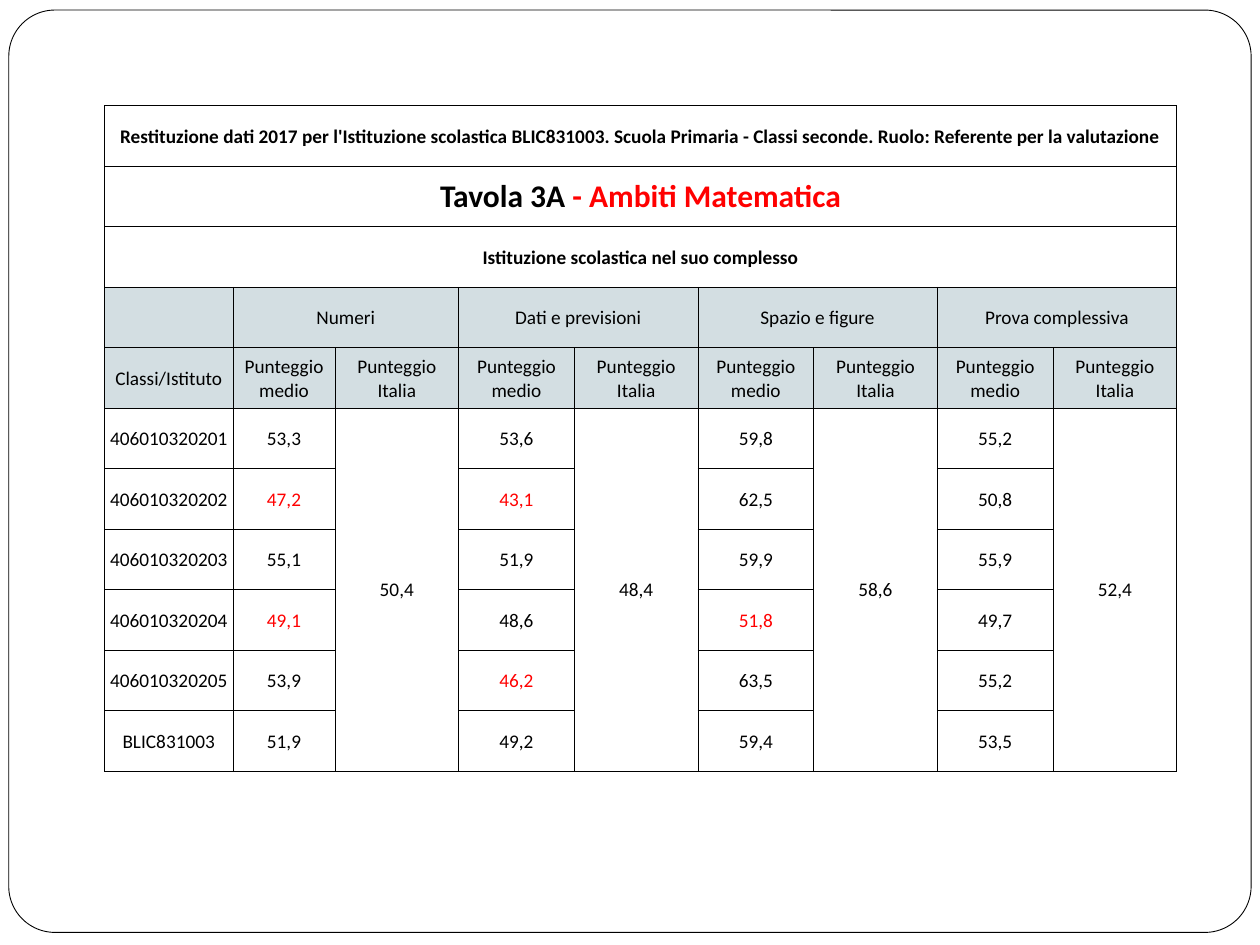
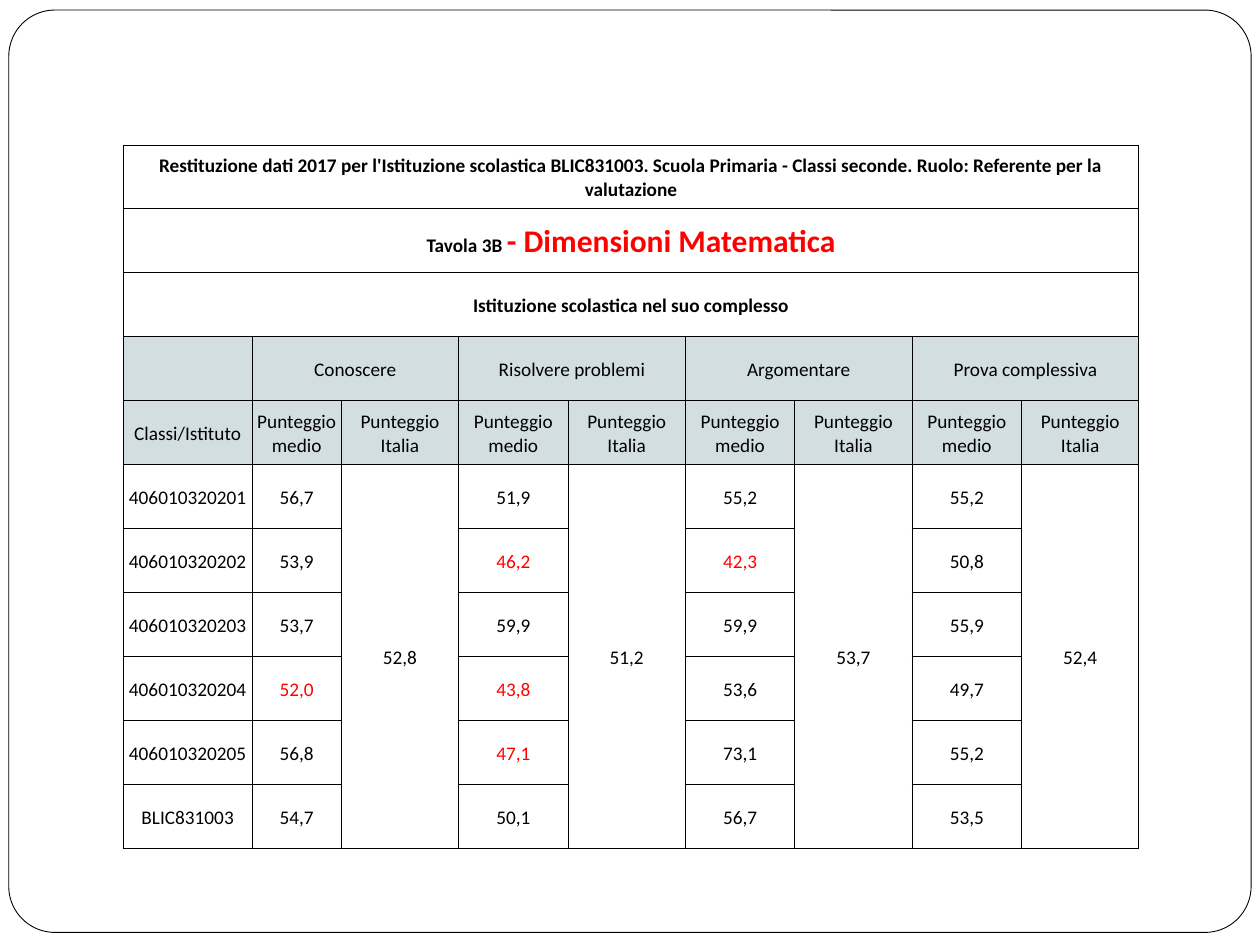
from lxml.etree import SubElement
from pptx import Presentation
from pptx.dml.color import RGBColor
from pptx.enum.shapes import MSO_SHAPE as Shape
from pptx.enum.text import MSO_ANCHOR as Anchor, PP_ALIGN as Align
from pptx.oxml.ns import qn
from pptx.util import Inches, Pt

BLACK = RGBColor(0, 0, 0)
WHITE = RGBColor(255, 255, 255)
RED = RGBColor(255, 0, 0)
HEADER_BLUE = RGBColor(0xD3, 0xDE, 0xE2)
FONT = "Calibri"
BODY_SIZE, TITLE_SIZE = 11, 18
LINE_WIDTH = Pt(0.5)

HEADING = ("Restituzione dati 2017 per l'Istituzione scolastica BLIC831003. "
           "Scuola Primaria - Classi seconde. Ruolo: Referente per la valutazione")
SCOPE = "Istituzione scolastica nel suo complesso"
CLASSES = ["406010320201", "406010320202", "406010320203",
           "406010320204", "406010320205", "BLIC831003"]
OVERALL = ("Prova complessiva", "52,4", ["55,2", "50,8", "55,9", "49,7", "55,2", "53,5"], [])

# Each group: name, Italian score, score by class, scores shown in red
TABLES = [
    {
        "title": ("Tavola 3A ", "- Ambiti Matematica"),
        "number_size": TITLE_SIZE,
        "left": 0.83, "top": 0.84, "height": 5.28,
        "columns": [1.02, 0.81, 0.98] + [0.92, 0.98] * 3,
        "groups": [
            ("Numeri", "50,4", ["53,3", "47,2", "55,1", "49,1", "53,9", "51,9"],
             ["47,2", "49,1"]),
            ("Dati e previsioni", "48,4", ["53,6", "43,1", "51,9", "48,6", "46,2", "49,2"],
             ["43,1", "46,2"]),
            ("Spazio e figure", "58,6", ["59,8", "62,5", "59,9", "51,8", "63,5", "59,4"],
             ["51,8"]),
            OVERALL,
        ],
    },
    {
        "title": ("Tavola 3B ", "- Dimensioni Matematica"),
        "number_size": BODY_SIZE,
        "left": 0.98, "top": 1.15, "height": 5.59,
        "columns": [1.02, 0.71, 0.93] + [0.87, 0.93] * 3,
        "groups": [
            ("Conoscere", "52,8", ["56,7", "53,9", "53,7", "52,0", "56,8", "54,7"],
             ["52,0"]),
            ("Risolvere problemi", "51,2", ["51,9", "46,2", "59,9", "43,8", "47,1", "50,1"],
             ["46,2", "43,8", "47,1"]),
            ("Argomentare", "53,7", ["55,2", "42,3", "59,9", "53,6", "73,1", "56,7"],
             ["42,3"]),
            OVERALL,
        ],
    },
]
GROUP_ROW, LABEL_ROW, FIRST_CLASS_ROW = 3, 4, 5
ROW_COUNT = FIRST_CLASS_ROW + len(CLASSES)


def write(cell, text, size=BODY_SIZE, color=BLACK, bold=False):
    """Append a centred run to the cell."""
    paragraph = cell.text_frame.paragraphs[0]
    paragraph.alignment = Align.CENTER
    run = paragraph.add_run()
    run.text = text
    run.font.name = FONT
    run.font.size = Pt(size)
    run.font.bold = bold
    run.font.color.rgb = color


def add_borders(cell):
    properties = cell._tc.get_or_add_tcPr()
    for position, side in enumerate(("lnL", "lnR", "lnT", "lnB")):
        line = SubElement(properties, qn(f"a:{side}"), w=str(LINE_WIDTH))
        fill = SubElement(line, qn("a:solidFill"))
        SubElement(fill, qn("a:srgbClr"), val=str(BLACK))
        properties.insert(position, line)


def format_cell(cell, is_header):
    cell.vertical_anchor = Anchor.MIDDLE
    cell.margin_left = cell.margin_right = cell.margin_top = Inches(0.01)
    cell.margin_bottom = 0
    if is_header:
        cell.fill.solid()
        cell.fill.fore_color.rgb = HEADER_BLUE
    else:
        cell.fill.background()
    add_borders(cell)


def add_frame(layout, slide):
    """Draw the rounded frame and move it to the layout that all slides share."""
    frame = slide.shapes.add_shape(Shape.ROUNDED_RECTANGLE, Inches(0.07), Inches(0.08),
                                   Inches(9.86), Inches(7.32))
    frame.adjustments[0] = 0.05
    frame.shadow.inherit = False
    frame.fill.solid()
    frame.fill.fore_color.rgb = WHITE
    frame.line.color.rgb = BLACK
    frame.line.width = LINE_WIDTH
    layout.shapes.element.insert(2, frame.element)


def add_empty_table(slide, data):
    columns = data["columns"]
    table = slide.shapes.add_table(
        ROW_COUNT, len(columns), Inches(data["left"]), Inches(data["top"]),
        Inches(sum(columns)), Inches(data["height"])).table
    table.first_row = table.horz_banding = False
    for column, width in zip(table.columns, columns):
        column.width = Inches(width)
    for row_index, row in enumerate(table.rows):
        for cell in row.cells:
            format_cell(cell, row_index in (GROUP_ROW, LABEL_ROW))
    return table


def fill_table(table, data):
    last_column = len(data["columns"]) - 1
    for row in range(GROUP_ROW):
        table.cell(row, 0).merge(table.cell(row, last_column))
    number, subject = data["title"]
    write(table.cell(0, 0), HEADING, bold=True)
    write(table.cell(1, 0), number, size=data["number_size"], bold=True)
    write(table.cell(1, 0), subject, size=TITLE_SIZE, color=RED, bold=True)
    write(table.cell(2, 0), SCOPE, bold=True)

    write(table.cell(LABEL_ROW, 0), "Classi/Istituto")
    for row, name in enumerate(CLASSES, FIRST_CLASS_ROW):
        write(table.cell(row, 0), name)

    for index, (name, italy, scores, red_scores) in enumerate(data["groups"]):
        mean_column = 1 + 2 * index
        italy_column = mean_column + 1
        table.cell(GROUP_ROW, mean_column).merge(table.cell(GROUP_ROW, italy_column))
        write(table.cell(GROUP_ROW, mean_column), name)
        write(table.cell(LABEL_ROW, mean_column), "Punteggio medio")
        write(table.cell(LABEL_ROW, italy_column), "Punteggio Italia")
        for row, score in enumerate(scores, FIRST_CLASS_ROW):
            write(table.cell(row, mean_column), score,
                  color=RED if score in red_scores else BLACK)
        italy_cell = table.cell(FIRST_CLASS_ROW, italy_column)
        italy_cell.merge(table.cell(ROW_COUNT - 1, italy_column))
        write(italy_cell, italy)


def main():
    presentation = Presentation()
    presentation.slide_width, presentation.slide_height = Inches(10), Inches(7.5)
    layout = presentation.slide_layouts.get_by_name("Blank")
    slides = [presentation.slides.add_slide(layout) for _ in TABLES]
    add_frame(layout, slides[0])
    for slide, data in zip(slides, TABLES):
        fill_table(add_empty_table(slide, data), data)
    presentation.save("out.pptx")


if __name__ == "__main__":
    main()
